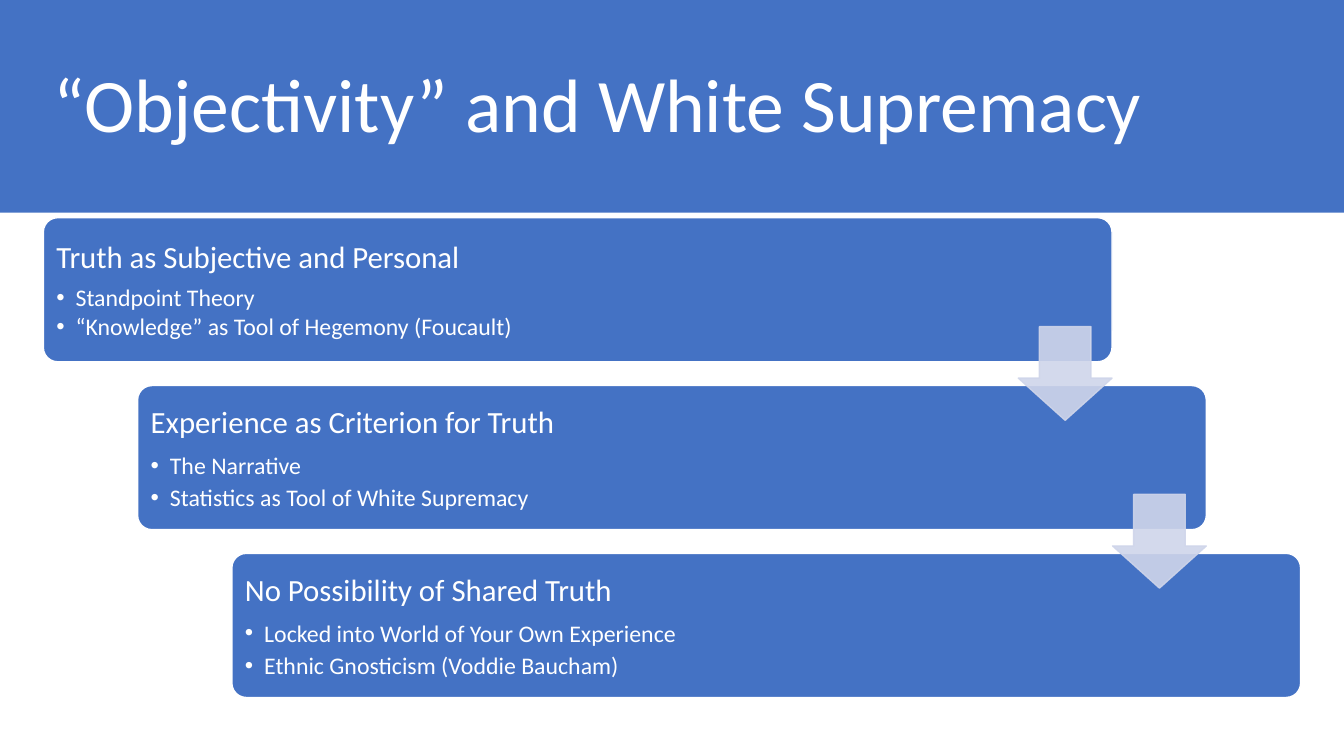
"""Build the slide on objectivity as three descending steps joined by arrows."""
import dataclasses

import lxml.etree
import pptx
import pptx.dml.color
import pptx.enum.shapes
import pptx.enum.text
import pptx.oxml.ns
import pptx.util

Inches = pptx.util.Inches
Pt = pptx.util.Pt
MSO_SHAPE = pptx.enum.shapes.MSO_SHAPE
qn = pptx.oxml.ns.qn


@dataclasses.dataclass(frozen=True)
class Theme:
    font: str = "Calibri"
    blue: str = "4472C4"
    pale: str = "CFD5EA"
    white: str = "FFFFFF"
    title_size: int = 54
    heading_size: int = 22
    bullet_size: int = 17


theme = Theme()


def add_block(kind, left, top, width, height, fill, line=None):
    shape = slide.shapes.add_shape(kind, Inches(left), Inches(top), Inches(width), Inches(height))
    shape.shadow.inherit = False
    shape.fill.solid()
    shape.fill.fore_color.rgb = pptx.dml.color.RGBColor.from_string(fill)
    if line:
        shape.line.color.rgb = pptx.dml.color.RGBColor.from_string(line)
        shape.line.width = Pt(1)
    else:
        shape.line.fill.background()
    return shape


def add_text(left, top, width, height, lines):
    box = slide.shapes.add_textbox(Inches(left), Inches(top), Inches(width), Inches(height))
    frame = box.text_frame
    frame.word_wrap = True
    frame.vertical_anchor = pptx.enum.text.MSO_ANCHOR.MIDDLE
    for index, (text, size, spacing, space_after) in enumerate(lines):
        paragraph = frame.paragraphs[0] if index == 0 else frame.add_paragraph()
        paragraph.line_spacing = spacing
        paragraph.space_after = Pt(space_after)
        run = paragraph.add_run()
        run.text = text
        run.font.name = theme.font
        run.font.size = Pt(size)
        run.font.color.rgb = pptx.dml.color.RGBColor.from_string(theme.white)
    return frame


presentation = pptx.Presentation()
presentation.slide_width = Inches(13.33)
presentation.slide_height = Inches(7.5)
slide = presentation.slides.add_slide(presentation.slide_layouts[6])

add_block(MSO_SHAPE.RECTANGLE, 0, -0.01, 13.33, 2.12, theme.blue)
add_text(0.43, 0.35, 12.48, 1.45,
         [("“Objectivity” and White Supremacy", theme.title_size, 0.9, 0)])

steps = [
    ("Truth as Subjective and Personal",
     ["Standpoint Theory", "“Knowledge” as Tool of Hegemony (Foucault)"], 9.06, 0.9),
    ("Experience as Criterion for Truth",
     ["The Narrative", "Statistics as Tool of White Supremacy"], 8.66, 1.0),
    ("No Possibility of Shared Truth",
     ["Locked into World of Your Own Experience", "Ethnic Gnosticism (Voddie Baucham)"], 8.66, 1.0),
]
first_left, first_top = 0.43, 2.16
step_across, step_down = 0.935, 1.665

for index, (heading, bullets, text_width, bullet_spacing) in enumerate(steps):
    left = first_left + index * step_across
    top = first_top + index * step_down
    card = add_block(MSO_SHAPE.ROUNDED_RECTANGLE, left, top, 10.6, 1.43, theme.blue, theme.white)
    card.adjustments[0] = 0.1
    lines = [(heading, theme.heading_size, 1.0, theme.heading_size * 0.35)]
    lines += [(bullet, theme.bullet_size, bullet_spacing, theme.bullet_size * 0.15)
              for bullet in bullets]
    frame = add_text(left + 0.04, top + 0.04, text_width, 1.34, lines)
    frame.margin_left = frame.margin_right = Inches(0.09)
    frame.margin_top = frame.margin_bottom = Inches(0.09)
    for paragraph in frame.paragraphs[1:]:
        paragraph.level = 1
        properties = paragraph._p.get_or_add_pPr()
        properties.set("marL", str(Inches(0.19)))
        properties.set("indent", str(-Inches(0.19)))
        lxml.etree.SubElement(properties, qn("a:buFont")).set("typeface", "Arial")
        lxml.etree.SubElement(properties, qn("a:buChar")).set("char", "•")

for index in range(len(steps) - 1):
    arrow = add_block(MSO_SHAPE.DOWN_ARROW, 10.1 + index * step_across, 3.24 + index * step_down,
                      0.93, 0.93, theme.pale, theme.pale)
    arrow.adjustments[0] = 0.55
    arrow.adjustments[1] = 0.45
    for color in arrow._element.spPr.iter(qn("a:srgbClr")):
        lxml.etree.SubElement(color, qn("a:alpha")).set("val", "90000")

presentation.save("out.pptx")
